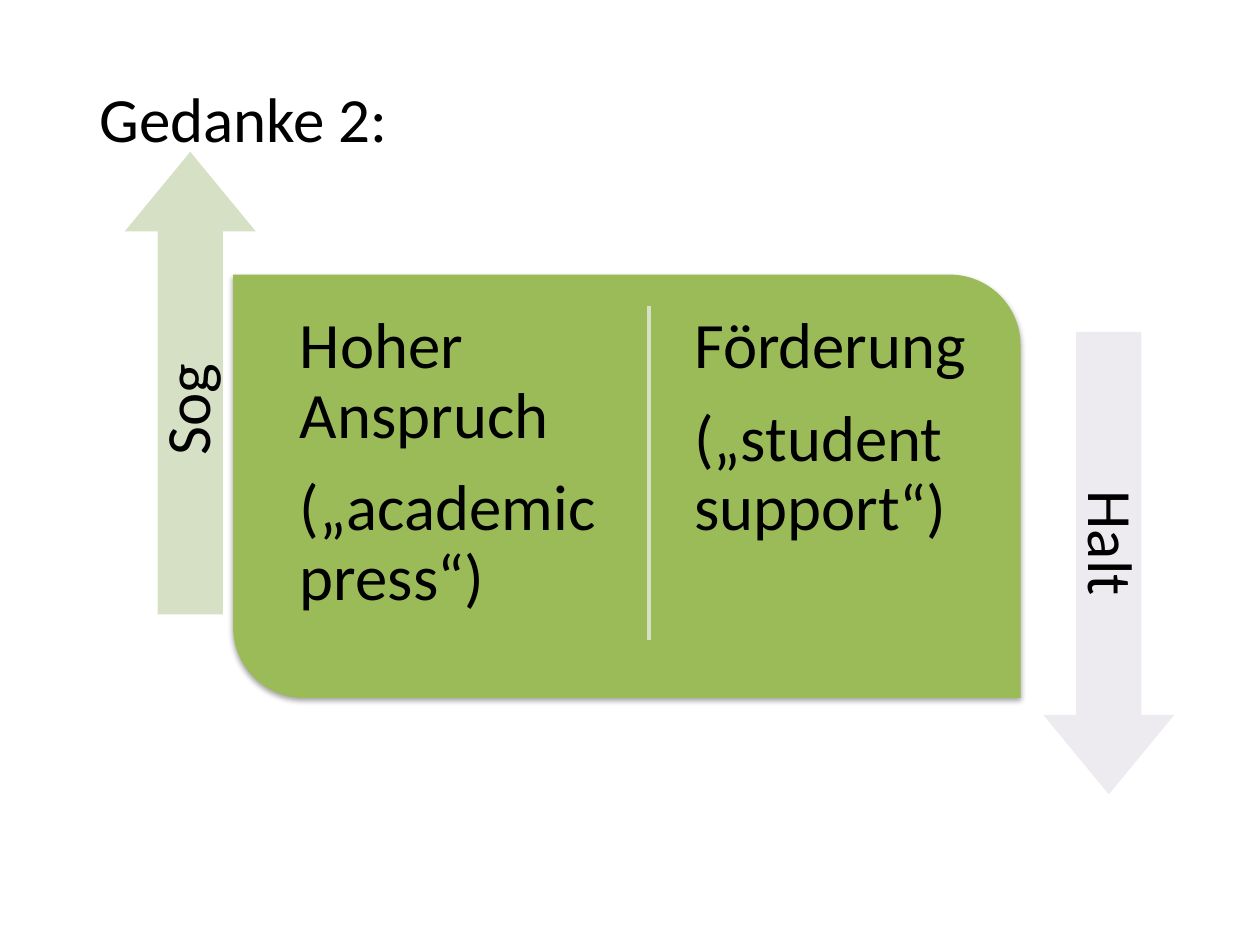
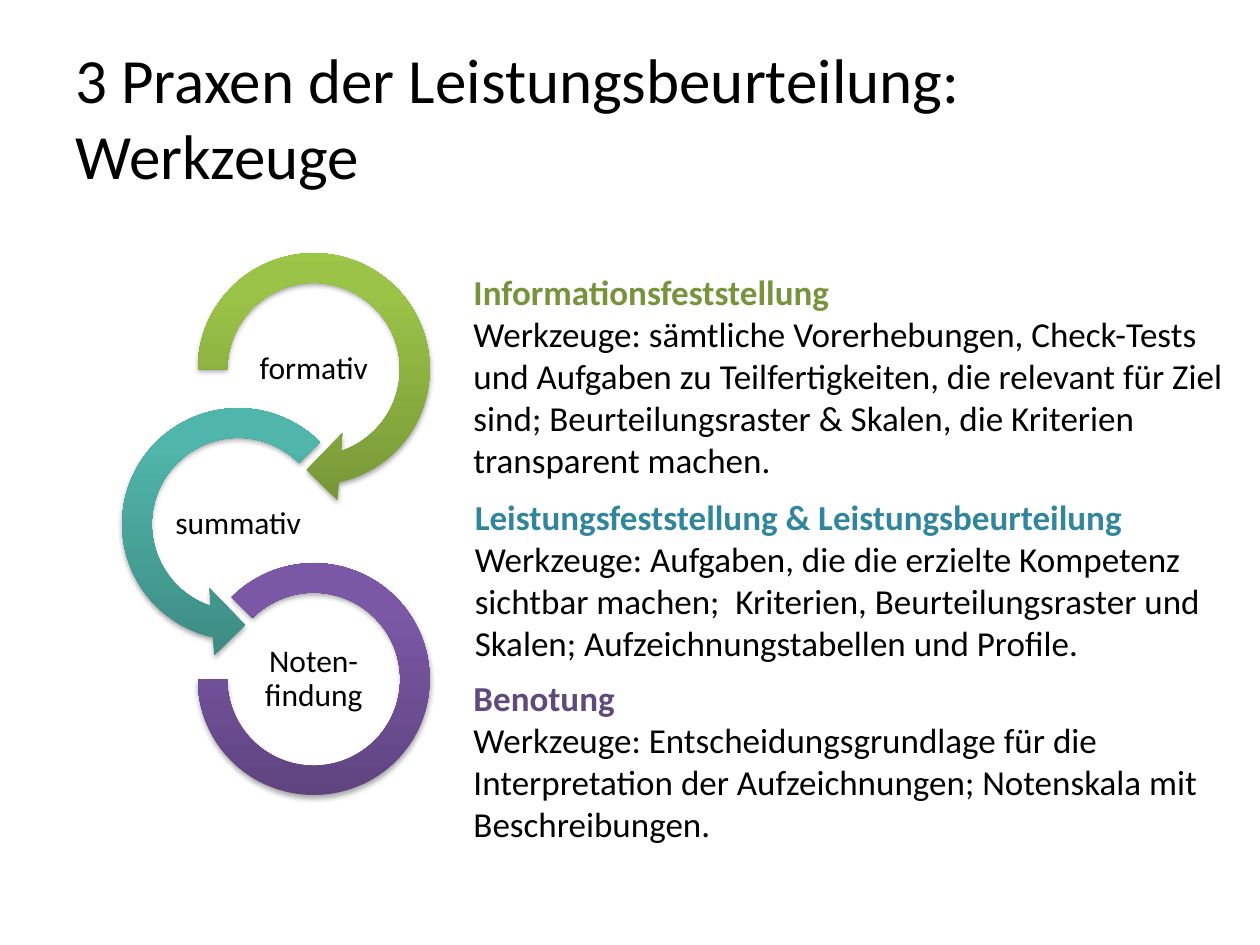
from copy import deepcopy
from dataclasses import dataclass

from lxml.etree import SubElement
from pptx import Presentation
from pptx.dml.color import RGBColor
from pptx.enum.shapes import MSO_CONNECTOR, MSO_SHAPE
from pptx.enum.text import MSO_ANCHOR, PP_ALIGN
from pptx.oxml.ns import qn
from pptx.util import Inches, Pt


@dataclass(frozen=True)
class Theme:
    font: str = "Calibri"
    text: str = "000000"
    panel: str = "9BBB59"
    pull: str = "D5E0C4"
    hold: str = "EDEAF0"
    green: tuple = ("779737", "9BC348", "9DC746")
    teal: tuple = ("3D8B83", "50B5AA", "4EB8AC")
    purple: tuple = ("5F4480", "7B58A6", "7C57A8")
    green_head: str = "77933C"
    teal_head: str = "31859C"
    purple_head: str = "604A7B"
    title_size: int = 36
    column_size: int = 37
    arrow_size: int = 36
    body_size: int = 20
    label_size: int = 18


class Deck:
    def __init__(self, theme):
        self.theme = theme
        self.prs = Presentation()
        self.prs.slide_width = Inches(10)
        self.prs.slide_height = Inches(7.5)
        self.s = None

    def new_slide(self):
        self.s = self.prs.slides.add_slide(self.prs.slide_layouts[6])

    def text(self, box, lines, size, heading=None, inset=None, middle=False,
             align=PP_ALIGN.LEFT, spacing=None, gap=0, rotation=0):
        sp = self.s.shapes.add_textbox(*map(Inches, box))
        sp.rotation = rotation
        tf = sp.text_frame
        tf.word_wrap = True
        tf.vertical_anchor = MSO_ANCHOR.MIDDLE if middle else MSO_ANCHOR.TOP
        if inset is not None:
            tf.margin_left = tf.margin_right = Inches(inset)
            tf.margin_top = tf.margin_bottom = Inches(inset)
        for i, line in enumerate(lines):
            p = tf.add_paragraph() if i else tf.paragraphs[0]
            p.text = line
            p.alignment = align
            p.line_spacing = spacing
            p.space_after = Pt(gap)
            is_heading = heading is not None and i == 0
            for r in p.runs:
                r.font.name = self.theme.font
                r.font.size = Pt(size)
                r.font.bold = is_heading
                color = heading if is_heading else self.theme.text
                r.font.color.rgb = RGBColor.from_string(color)

    def title(self, box, text):
        self.text(box, [text], self.theme.title_size, middle=True)

    def shape(self, kind, box, fill, adjustments, rotation=0, shadow=False):
        sp = self.s.shapes.add_shape(kind, *map(Inches, box))
        sp.rotation = rotation
        for i, value in enumerate(adjustments):
            sp.adjustments[i] = value
        sp.line.fill.background()
        sp.shadow.inherit = False
        if isinstance(fill, tuple):
            self.gradient(sp, fill)
        else:
            sp.fill.solid()
            sp.fill.fore_color.rgb = RGBColor.from_string(fill)
        if shadow:
            self.cast_shadow(sp)

    def gradient(self, sp, colors):
        sp.fill.gradient()
        sp.fill.gradient_angle = 90
        stops = sp._element.spPr.find(qn("a:gradFill")).find(qn("a:gsLst"))
        stops.append(deepcopy(stops[0]))
        for stop, position, color in zip(sp.fill.gradient_stops, (0, 0.8, 1), colors):
            stop.position = position
            stop.color.rgb = RGBColor.from_string(color)

    def cast_shadow(self, sp):
        effects = sp._element.spPr.find(qn("a:effectLst"))
        outer = SubElement(effects, qn("a:outerShdw"), blurRad=str(Pt(3.1)),
                           dist=str(Pt(1.8)), dir="5400000", rotWithShape="0")
        color = SubElement(outer, qn("a:srgbClr"), val=self.theme.text)
        SubElement(color, qn("a:alpha"), val="35000")

    def line(self, start, end, color, width):
        c = self.s.shapes.add_connector(MSO_CONNECTOR.STRAIGHT, *map(Inches, start + end))
        c.line.color.rgb = RGBColor.from_string(color)
        c.line.width = Pt(width)
        SubElement(c._element.spPr, qn("a:effectLst"))

    def side_arrow(self, center, label_center, label, fill, rotation):
        self.shape(MSO_SHAPE.RIGHT_ARROW, centered(center, 3.67, 1.04), fill,
                   (0.498, 0.607), rotation)
        self.text(centered(label_center, 3.35, 0.52), [label], self.theme.arrow_size,
                  inset=0.15, middle=True, align=PP_ALIGN.CENTER, spacing=0.9,
                  rotation=rotation)

    def ring(self, kind, center, size, colors, adjustments, label):
        self.shape(kind, centered(center, size, size), colors, adjustments, shadow=True)
        self.text(centered(center, 1.19, 0.59), [label], self.theme.label_size,
                  inset=0.01, middle=True, align=PP_ALIGN.CENTER, spacing=0.9)


def centered(center, width, height):
    x, y = center
    return x - width / 2, y - height / 2, width, height


def build_idea(deck):
    t = deck.theme
    deck.new_slide()
    deck.shape(MSO_SHAPE.ROUND_2_DIAG_RECTANGLE, (1.85, 2.18, 6.25, 3.36), t.panel,
               (0, 0.167), shadow=True)
    deck.line((5.15, 2.43), (5.15, 5.08), t.pull, 2)
    columns = (
        (2.23, ["Hoher Anspruch", "(„academic press“)"]),
        (5.36, ["Förderung", "(„student support“)"]),
    )
    for left, lines in columns:
        deck.text((left, 2.33, 2.71, 2.85), lines, t.column_size,
                  inset=0.15, spacing=0.9, gap=13)
    deck.side_arrow((1.51, 3.04), (1.51, 3.25), "Sog", t.pull, 270)
    deck.side_arrow((8.8, 4.47), (8.8, 4.31), "Halt", t.hold, 90)
    deck.title((0.69, 0.52, 8.36, 0.83), "Gedanke 2:")


def build_tools(deck):
    t = deck.theme
    deck.new_slide()
    deck.title((0.5, 0.3, 7.33, 1.25), "3 Praxen der Leistungsbeurteilung: Werkzeuge")
    rings = (
        (MSO_SHAPE.CIRCULAR_ARROW, 2.49, 2.14, t.green,
         (0.11, 11.42, 45, 108, 0.125), "formativ"),
        (MSO_SHAPE.LEFT_CIRCULAR_ARROW, 1.89, 2.14, t.teal,
         (0.11, 11.42, 63, 189, 0.125), "summativ"),
        (MSO_SHAPE.BLOCK_ARC, 2.49, 1.84, t.purple,
         (135, 108, 0.127), "Noten-\nfindung"),
    )
    for i, (kind, x, size, colors, adjustments, label) in enumerate(rings):
        deck.ring(kind, (x, 2.93 + 1.23 * i), size, colors, adjustments, label)
    practices = (
        ((3.66, 2.1, 6.34, 1.78), t.green_head, "Informationsfeststellung",
         "Werkzeuge: sämtliche Vorerhebungen, Check-Tests und Aufgaben zu "
         "Teilfertigkeiten, die relevant für Ziel sind; Beurteilungsraster & Skalen, "
         "die Kriterien transparent machen."),
        ((3.67, 3.88, 6.33, 1.45), t.teal_head,
         "Leistungsfeststellung & Leistungsbeurteilung",
         "Werkzeuge: Aufgaben, die die erzielte Kompetenz sichtbar machen;  Kriterien, "
         "Beurteilungsraster und Skalen; Aufzeichnungstabellen und Profile."),
        ((3.66, 5.32, 6.14, 1.45), t.purple_head, "Benotung",
         "Werkzeuge: Entscheidungsgrundlage für die Interpretation der "
         "Aufzeichnungen; Notenskala mit Beschreibungen."),
    )
    for box, color, heading, body in practices:
        deck.text(box, [heading, body], t.body_size, heading=color)


def main():
    deck = Deck(Theme())
    build_idea(deck)
    build_tools(deck)
    deck.prs.save("out.pptx")


if __name__ == "__main__":
    main()
